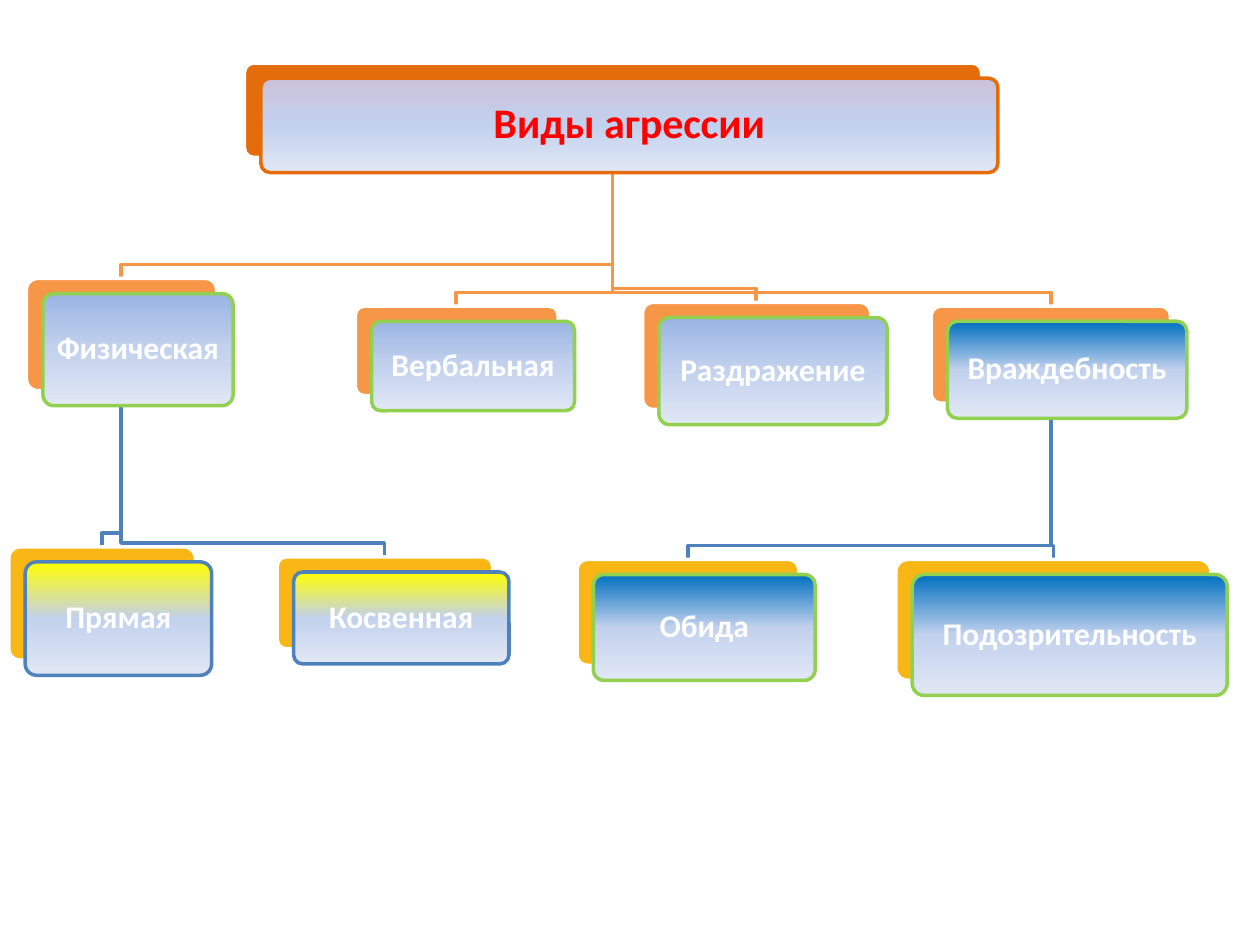
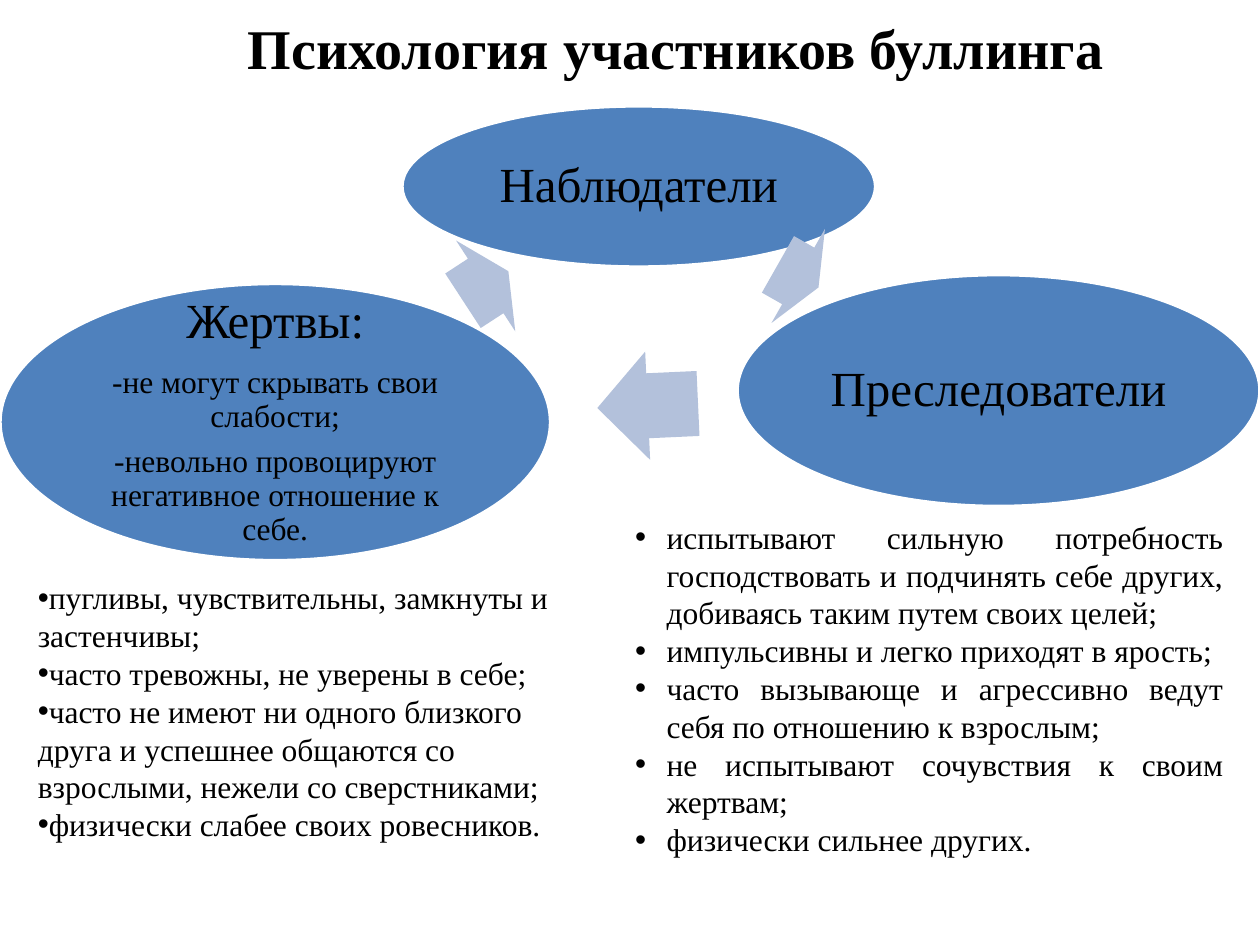
from copy import deepcopy

from pptx import Presentation
from pptx.dml.color import RGBColor
from pptx.enum.shapes import MSO_SHAPE
from pptx.enum.text import MSO_ANCHOR, MSO_AUTO_SIZE, PP_ALIGN
from pptx.oxml.ns import qn
from pptx.util import Pt

SCALE = 9144
SANS, SERIF = "Calibri", "Times New Roman"
COLORS = {
    "white": "FFFFFF", "black": "000000", "red": "FF0000", "blue": "4F81BD",
    "pale_blue": "B3C1DB", "orange": "F79646", "dark_orange": "E46C0A",
    "gold": "F8B714", "green": "92D050", "lilac": "CCC1DA", "sky": "9AB5E4",
    "yellow": "FFFF00", "deep_blue": "0070C0", "mist": "C2D1ED", "haze": "E1E8F5",
}
OFFSET_X, OFFSET_Y, BEND = 13, 12, 11

KINDS = {
    "Виды агрессии": (None, (194, 50, 585, 75), "dark_orange", "lilac", "dark_orange"),
    "Физическая": ("Виды агрессии", (21, 221, 151, 89), "orange", "sky", "green"),
    "Вербальная": ("Виды агрессии", (282, 243, 161, 71), "orange", "sky", "green"),
    "Раздражение": ("Виды агрессии", (510, 240, 181, 85), "orange", "sky", "green"),
    "Враждебность": ("Виды агрессии", (739, 243, 190, 77), "orange", "deep_blue", "green"),
    "Прямая": ("Физическая", (7, 434, 148, 90), "gold", "yellow", "blue"),
    "Косвенная": ("Физическая", (220, 442, 171, 73), "gold", "yellow", "blue"),
    "Обида": ("Враждебность", (458, 444, 176, 84), "gold", "deep_blue", "green"),
    "Подозрительность": ("Враждебность", (711, 444, 250, 96), "gold", "deep_blue", "green"),
}
ROLES = [
    ((585, 218, 415, 184), [("Преследователи", 28)]),
    ((0, 225, 437, 220), [
        ("Жертвы:", 28),
        ("-не могут скрывать свои слабости;", 18),
        ("-невольно провоцируют негативное отношение к себе.", 18),
    ]),
    ((319, 84, 376, 128), [("Наблюдатели", 28)]),
]
ARROWS = [
    ((474, 279, 80, 86), 177.4),
    ((364, 184, 43, 86), 326.9),
    ((615, 176, 37, 86), 29.6),
]
VICTIM_TRAITS = [
    "пугливы, чувствительны, замкнуты и застенчивы;",
    "часто тревожны, не уверены в себе;",
    "часто не имеют ни одного близкого друга и успешнее общаются со взрослыми, "
    "нежели со сверстниками;",
    "физически слабее своих ровесников.",
]
BULLY_TRAITS = [
    "испытывают сильную потребность господствовать и подчинять себе других, "
    "добиваясь таким путем своих целей;",
    "импульсивны и легко приходят в ярость;",
    "часто вызывающе и агрессивно ведут себя по отношению к взрослым;",
    "не испытывают сочувствия к своим жертвам;",
    "физически сильнее других.",
]


def px(n):
    """Turn px into EMU."""
    return n * SCALE


def rgb(name):
    """Look up a named colour."""
    return RGBColor.from_string(COLORS[name])


def write(tf, text, font=SERIF, size=18, color="black", bold=False,
          align=PP_ALIGN.CENTER, line=1.0, after=0.0, indent=None):
    """Add a formatted paragraph, filling the empty first one if there is one."""
    p = tf.paragraphs[0] if not tf.text else tf.add_paragraph()
    p.alignment = align
    p.line_spacing = line
    p.space_before = Pt(0)
    p.space_after = Pt(size * after)
    if indent:
        left, first = indent
        pPr = p._p.get_or_add_pPr()
        pPr.set("marL", str(px(left)))
        pPr.set("indent", str(px(first)))
    r = p.add_run()
    r.text = text
    r.font.name, r.font.size, r.font.bold = font, Pt(size), bold
    r.font.color.rgb = rgb(color)


class Deck:
    """Hold the presentation style and the current slide."""

    def __init__(self):
        """Start an empty 4:3 deck."""
        self.prs = Presentation()
        self.prs.slide_width, self.prs.slide_height = px(1000), px(750)
        self.s = None

    def slide(self, layout):
        """Add a white slide and make it current."""
        self.s = self.prs.slides.add_slide(self.prs.slide_layouts[layout])
        fill = self.s.background.fill
        fill.solid()
        fill.fore_color.rgb = rgb("white")

    def place(self, idx, box, anchor=MSO_ANCHOR.TOP):
        """Move a placeholder and return its text frame."""
        sp = self.s.placeholders[idx]
        sp.left, sp.top, sp.width, sp.height = map(px, box)
        tf = sp.text_frame
        tf.word_wrap, tf.auto_size = True, MSO_AUTO_SIZE.NONE
        tf.vertical_anchor = anchor
        return tf

    def title(self, text, box):
        """Fill the title placeholder."""
        tf = self.place(0, box)
        tf.margin_top = px(11)
        write(tf, text, size=32, bold=True)

    def bullets(self, idx, box, items, align, indent):
        """Fill a body placeholder with a list."""
        tf = self.place(idx, box)
        for item in items:
            write(tf, item, align=align, indent=indent)

    def shape(self, kind, box, fill, line=None, adj=()):
        """Draw a flat preset shape."""
        sp = self.s.shapes.add_shape(kind, *map(px, box))
        sp.shadow.inherit = False
        sp.fill.solid()
        sp.fill.fore_color.rgb = rgb(fill)
        for i, value in enumerate(adj):
            sp.adjustments[i] = value
        if line:
            sp.line.color.rgb = rgb(line)
            sp.line.width = Pt(2)
        else:
            sp.line.fill.background()
        return sp

    def gradient(self, sp, top):
        """Shade a shape from a top colour down to haze."""
        sp.fill.gradient()
        sp.fill.gradient_angle = 270
        stops = sp._element.spPr.find(qn("a:gradFill")).find(qn("a:gsLst"))
        stops.append(deepcopy(stops[0]))
        names = (top, "mist", "haze")
        for i, (stop, name) in enumerate(zip(sp.fill.gradient_stops, names)):
            stop.position = i / 2
            stop.color.rgb = rgb(name)

    def label(self, sp, lines, inset, wrap=True, **fmt):
        """Write centred lines inside a shape."""
        tf = sp.text_frame
        tf.word_wrap, tf.vertical_anchor = wrap, MSO_ANCHOR.MIDDLE
        tf.margin_left = tf.margin_right = px(inset)
        tf.margin_top = tf.margin_bottom = px(inset)
        for text, size in lines:
            write(tf, text, size=size, line=0.9, after=0.35, **fmt)

    def card(self, text, box, back, top, edge, size, color):
        """Draw a back plate and a shaded front plate with text."""
        x, y, w, h = box
        kind = MSO_SHAPE.ROUNDED_RECTANGLE
        self.shape(kind, box, back, "white", adj=[0.1])
        sp = self.shape(kind, (x + OFFSET_X, y + OFFSET_Y, w, h), "mist", edge, adj=[0.1])
        self.gradient(sp, top)
        self.label(sp, [(text, size)], 7, wrap=False, font=SANS, color=color, bold=True)

    def branch(self, parent, child, color):
        """Draw a bent line from a parent's bottom to a child's top."""
        (x, y, w, h), (cx, cy, cw, _) = parent, child
        start, end = x + w // 2, cx + cw // 2
        fb = self.s.shapes.build_freeform(start, y + h, scale=SCALE)
        fb.add_line_segments([(start, cy - BEND), (end, cy - BEND), (end, cy)], close=False)
        sp = fb.convert_to_shape()
        sp.shadow.inherit = False
        sp.fill.background()
        sp.line.color.rgb = rgb(color)
        sp.line.width = Pt(2)


def aggression(deck):
    """Build the tree of kinds of aggression."""
    deck.slide(6)
    for parent, box, back, _, _ in KINDS.values():
        if parent:
            deck.branch(KINDS[parent][1], box, "orange" if back == "orange" else "blue")
    for text, (parent, *look) in KINDS.items():
        size, color = (18, "white") if parent else (24, "red")
        deck.card(text, *look, size, color)


def bullying(deck):
    """Build the cycle of roles in bullying."""
    deck.slide(3)
    deck.title("Психология участников буллинга", (122, 0, 829, 125))
    for (box, lines), (arrow, angle) in zip(ROLES, ARROWS):
        sp = deck.shape(MSO_SHAPE.OVAL, box, "blue", "white")
        deck.label(sp, lines, 4)
        sp = deck.shape(MSO_SHAPE.RIGHT_ARROW, arrow, "pale_blue", adj=[0.6, 0.5])
        sp.rotation = angle
    deck.bullets(2, (469, 406, 512, 313), BULLY_TRAITS, PP_ALIGN.JUSTIFY, (50, -25))
    deck.bullets(1, (20, 454, 441, 222), VICTIM_TRAITS, PP_ALIGN.LEFT, (0, 0))


def main():
    """Build both slides and save them."""
    deck = Deck()
    aggression(deck)
    bullying(deck)
    deck.prs.save("out.pptx")


if __name__ == "__main__":
    main()
